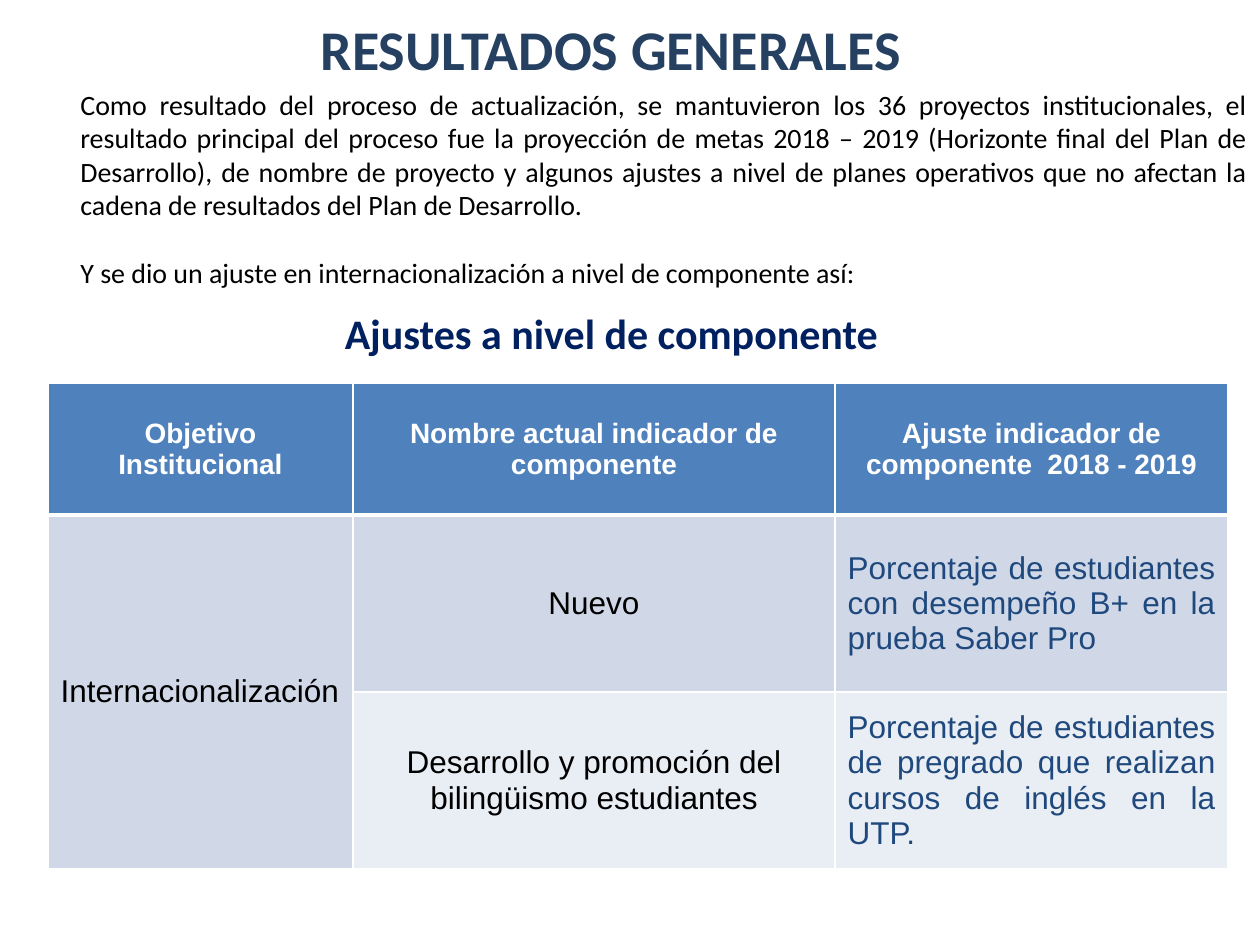
from dataclasses import dataclass

from lxml.etree import SubElement
from pptx import Presentation
from pptx.dml.color import RGBColor
from pptx.enum.text import MSO_ANCHOR as ANCHOR, PP_ALIGN as ALIGN
from pptx.oxml.ns import qn
from pptx.util import Emu, Pt

EMU_PER_PX = 914400 / 126


@dataclass(frozen=True)
class Theme:
    heading_font: str = "Calibri"
    table_font: str = "Arial"
    title: str = "254061"
    subtitle: str = "002060"
    text: str = "000000"
    adjustment: str = "1F497D"
    white: str = "FFFFFF"
    header_fill: str = "4F81BD"
    band_fills: tuple = ("D0D8E8", "E9EDF4")
    title_size: int = 32
    subtitle_size: int = 24
    cell_size: int = 18
    body_size: int = 16


THEME = Theme()

INTRO = (
    "Como resultado del proceso de actualización, se mantuvieron los 36 proyectos "
    "institucionales, el resultado principal del proceso fue la proyección de metas "
    "2018 – 2019 (Horizonte final del Plan de Desarrollo), de nombre de proyecto y "
    "algunos ajustes a nivel de planes operativos que no afectan la cadena de "
    "resultados del Plan de Desarrollo.",
    "Y se dio un ajuste en internacionalización a nivel de componente así:",
)
HEADERS = (
    "Objetivo Institucional",
    "Nombre actual indicador de componente",
    "Ajuste indicador de componente  2018 - 2019",
)
OBJECTIVE = "Internacionalización"
INDICATORS = (
    ("Nuevo", "Porcentaje de estudiantes con desempeño B+ en la prueba Saber Pro"),
    ("Desarrollo y promoción del bilingüismo estudiantes",
     "Porcentaje de estudiantes de pregrado que realizan cursos de inglés en la UTP."),
)
COL_WIDTHS = (305, 482, 393)
ROW_HEIGHTS = (132, 177, 177)


def px(n):
    return Emu(round(n * EMU_PER_PX))


def box(*lengths):
    return [px(n) for n in lengths]


def write(tf, *paragraphs, font=THEME.heading_font, size=THEME.body_size,
          color=THEME.text, bold=False, align=ALIGN.CENTER, gap=0):
    """Fill a text frame; gap is the space in points between paragraphs."""
    tf.word_wrap = True
    for i, text in enumerate(paragraphs):
        p = tf.add_paragraph() if i else tf.paragraphs[0]
        p.alignment = align
        p.space_before = Pt(gap if i else 0)
        r = p.add_run()
        r.text = text
        r.font.name = font
        r.font.size = Pt(size)
        r.font.bold = bold
        r.font.color.rgb = RGBColor.from_string(color)


def add_title(s, text):
    sp = s.shapes.title
    sp.left, sp.top, sp.width, sp.height = box(44, 0, 1134, 96)
    sp.text_frame.vertical_anchor = ANCHOR.MIDDLE
    write(sp.text_frame, text, size=THEME.title_size, color=THEME.title, bold=True)


def add_text(s, bounds, *paragraphs, **fmt):
    sp = s.shapes.add_textbox(*box(*bounds))
    write(sp.text_frame, *paragraphs, **fmt)


def set_borders(cell, bottom=1):
    """Draw white borders of 1 pt, with a bottom width of choice."""
    tc_pr = cell._tc.get_or_add_tcPr()
    for side, width in (("L", 1), ("R", 1), ("T", 1), ("B", bottom)):
        ln = SubElement(tc_pr, qn(f"a:ln{side}"), w=str(Pt(width)))
        fill = SubElement(ln, qn("a:solidFill"))
        SubElement(fill, qn("a:srgbClr"), val=THEME.white)


def style_cell(cell, fill, bottom=1):
    set_borders(cell, bottom)
    cell.fill.solid()
    cell.fill.fore_color.rgb = RGBColor.from_string(fill)
    cell.vertical_anchor = ANCHOR.MIDDLE


def write_cell(cell, text, **fmt):
    write(cell.text_frame, text, **{"font": THEME.table_font,
                                    "size": THEME.cell_size, **fmt})


def add_indicator_table(s):
    bounds = box(48, 383, sum(COL_WIDTHS), sum(ROW_HEIGHTS))
    table = s.shapes.add_table(len(ROW_HEIGHTS), len(COL_WIDTHS), *bounds).table
    for col, width in zip(table.columns, COL_WIDTHS):
        col.width = px(width)
    for row, height in zip(table.rows, ROW_HEIGHTS):
        row.height = px(height)

    for c, text in enumerate(HEADERS):
        cell = table.cell(0, c)
        style_cell(cell, THEME.header_fill, bottom=3)
        write_cell(cell, text, size=THEME.body_size, color=THEME.white, bold=True)

    for r, (fill, (name, adjustment)) in enumerate(zip(THEME.band_fills, INDICATORS), 1):
        for c in range(len(COL_WIDTHS)):
            style_cell(table.cell(r, c), fill)
        write_cell(table.cell(r, 1), name)
        write_cell(table.cell(r, 2), adjustment, color=THEME.adjustment,
                   align=ALIGN.JUSTIFY)

    objective = table.cell(1, 0)
    objective.merge(table.cell(len(INDICATORS), 0))
    write_cell(objective, OBJECTIVE, align=ALIGN.LEFT)


def main():
    prs = Presentation()
    prs.slide_width, prs.slide_height = box(1260, 945)
    s = prs.slides.add_slide(prs.slide_layouts.get_by_name("Title Only"))
    add_title(s, "RESULTADOS GENERALES")
    add_text(s, (68, 81, 1192, 284), *INTRO, align=ALIGN.JUSTIFY, gap=19.5)
    add_indicator_table(s)
    add_text(s, (122, 301, 979, 63), "Ajustes a nivel de componente",
             size=THEME.subtitle_size, color=THEME.subtitle, bold=True)
    prs.save("out.pptx")


if __name__ == "__main__":
    main()
